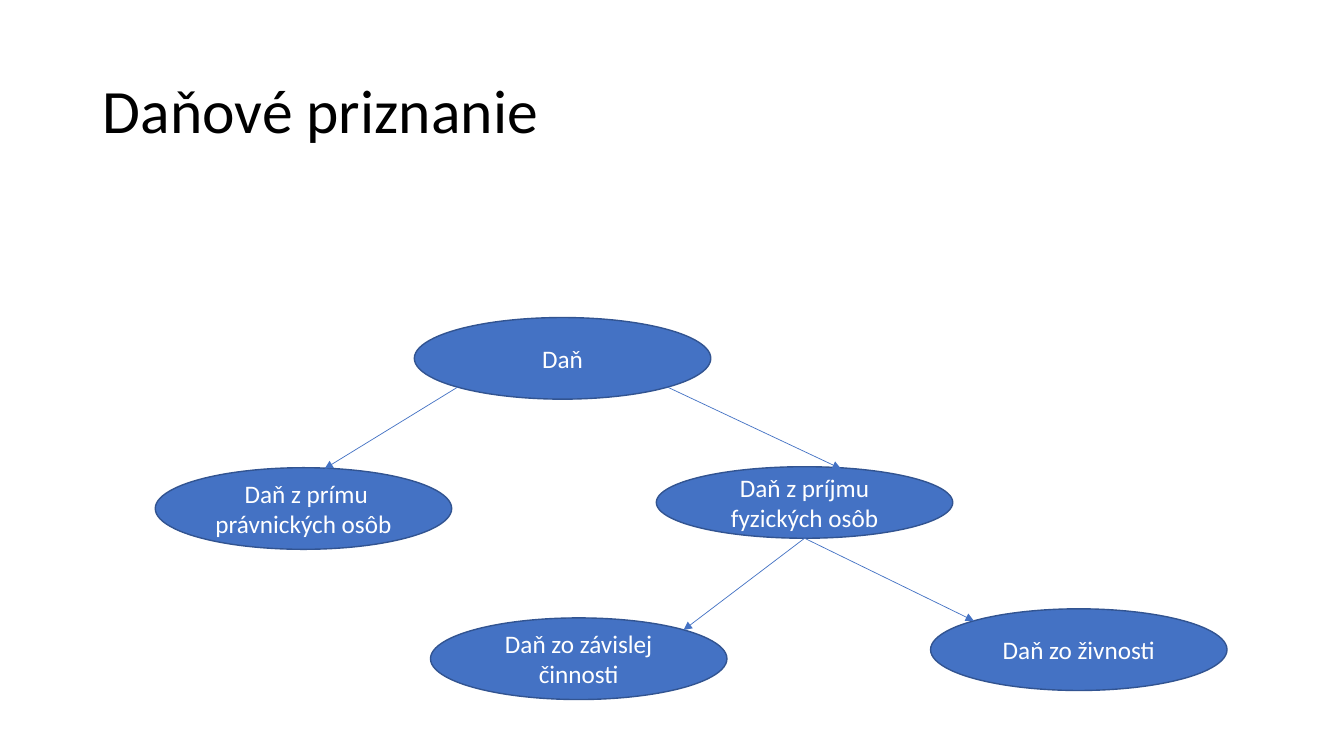
from dataclasses import dataclass

from lxml import etree
from pptx import Presentation
from pptx.dml.color import RGBColor
from pptx.enum import shapes, text
from pptx.oxml import ns
from pptx.util import Pt

PX = 9144  # EMU per px, 100 px to the inch
WIDE = 294
BLUE, EDGE, WHITE, BLACK = "4472C4", "325491", "FFFFFF", "000000"


@dataclass
class Node:
    label: str
    left: int
    top: int
    high: int = 81


@dataclass
class Arrow:
    start: tuple[int, int]
    end: tuple[int, int]


NODES = [
    Node("Daň", 411, 315),
    Node(" Daň z prímu právnických osôb", 154, 464),
    Node("Daň z príjmu fyzických osôb", 651, 463, 71),
    Node("Daň zo živnosti", 923, 604),
    Node("Daň zo závislej činnosti", 427, 613),
]
ARROWS = [
    Arrow((454, 384), (322, 465)),
    Arrow((662, 384), (834, 465)),
    Arrow((798, 534), (678, 625)),
    Arrow((798, 534), (966, 616)),
]


def px(*sizes: int) -> list[int]:
    return [size * PX for size in sizes]


def tint(color, value: str) -> None:
    color.rgb = RGBColor.from_string(value)


def write(shape, words: str, size: int, value: str, **style) -> None:
    frame = shape.text_frame
    frame.text = words
    frame.word_wrap = True
    frame.vertical_anchor = text.MSO_ANCHOR.MIDDLE
    para = frame.paragraphs[0]
    for name, item in style.items():
        setattr(para, name, item)
    font = para.runs[0].font
    for name, item in {"name": "Calibri", "size": Pt(size)}.items():
        setattr(font, name, item)
    tint(font.color, value)


def draw_node(slide, node: Node) -> None:
    box = px(node.left, node.top, WIDE, node.high)
    oval = slide.shapes.add_shape(shapes.MSO_SHAPE.OVAL, *box)
    oval.shadow.inherit = False
    oval.fill.solid()
    tint(oval.fill.fore_color, BLUE)
    tint(oval.line.color, EDGE)
    oval.line.width = Pt(1)
    write(oval, node.label, 18, WHITE, alignment=text.PP_ALIGN.CENTER)


def draw_arrow(slide, arrow: Arrow) -> None:
    ends = px(*arrow.start, *arrow.end)
    link = slide.shapes.add_connector(shapes.MSO_CONNECTOR.STRAIGHT, *ends)
    tint(link.line.color, BLUE)
    link.line.width = Pt(0.5)
    # Arrowhead and no shadow
    tail = etree.SubElement(link.line._get_or_add_ln(), ns.qn("a:tailEnd"))
    tail.set("type", "triangle")
    etree.SubElement(link._element.spPr, ns.qn("a:effectLst"))


def main() -> None:
    deck = Presentation()
    deck.slide_width, deck.slide_height = px(1333, 750)
    slide = deck.slides.add_slide(deck.slide_layouts[5])

    # Title
    title = slide.shapes.title
    title.left, title.top, title.width, title.height = px(92, 40, 1150, 145)
    write(title, "Daňové priznanie", 44, BLACK,
          alignment=text.PP_ALIGN.LEFT, line_spacing=0.9)

    # Tax tree
    for node in NODES:
        draw_node(slide, node)
    for arrow in ARROWS:
        draw_arrow(slide, arrow)

    deck.save("out.pptx")


if __name__ == "__main__":
    main()
